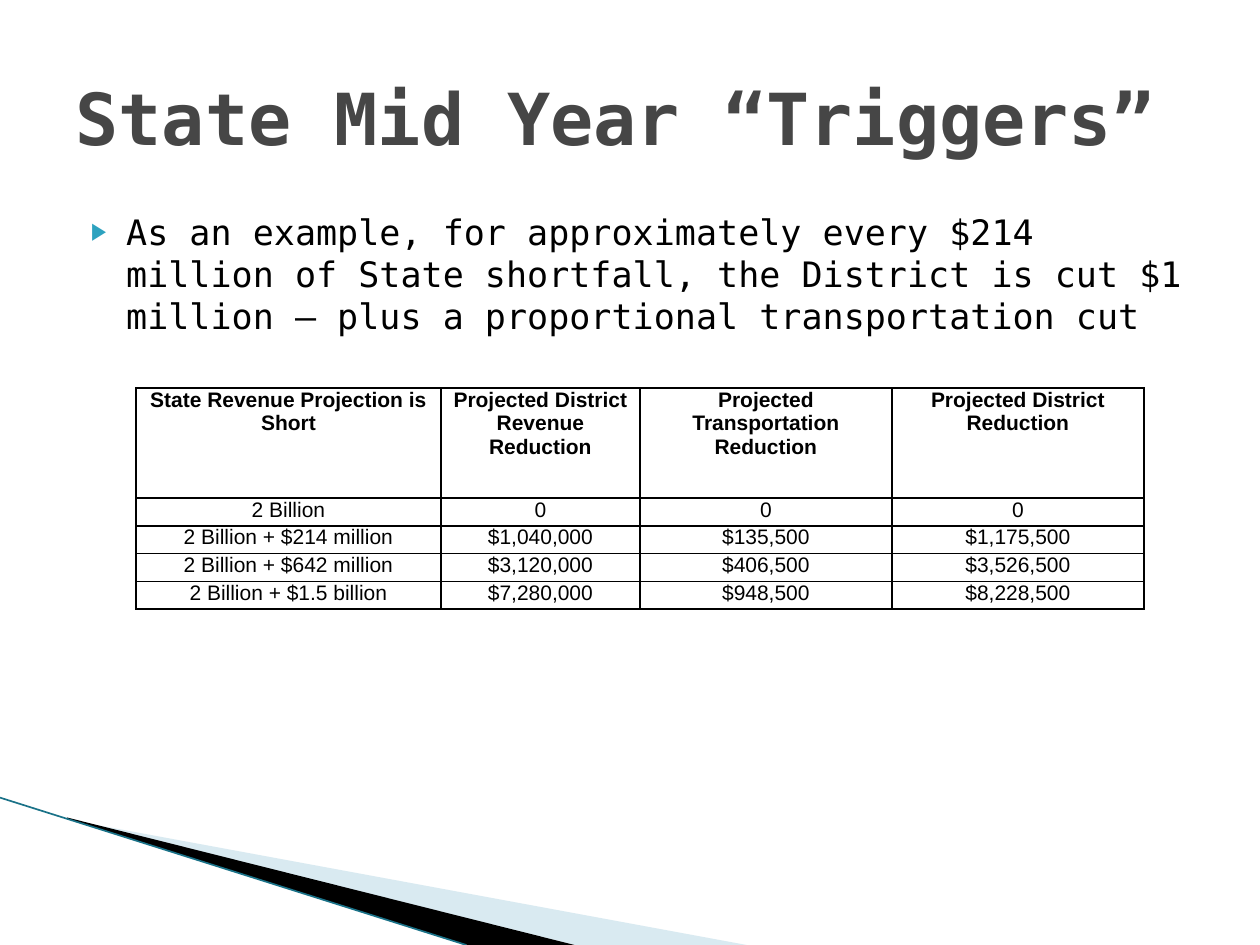
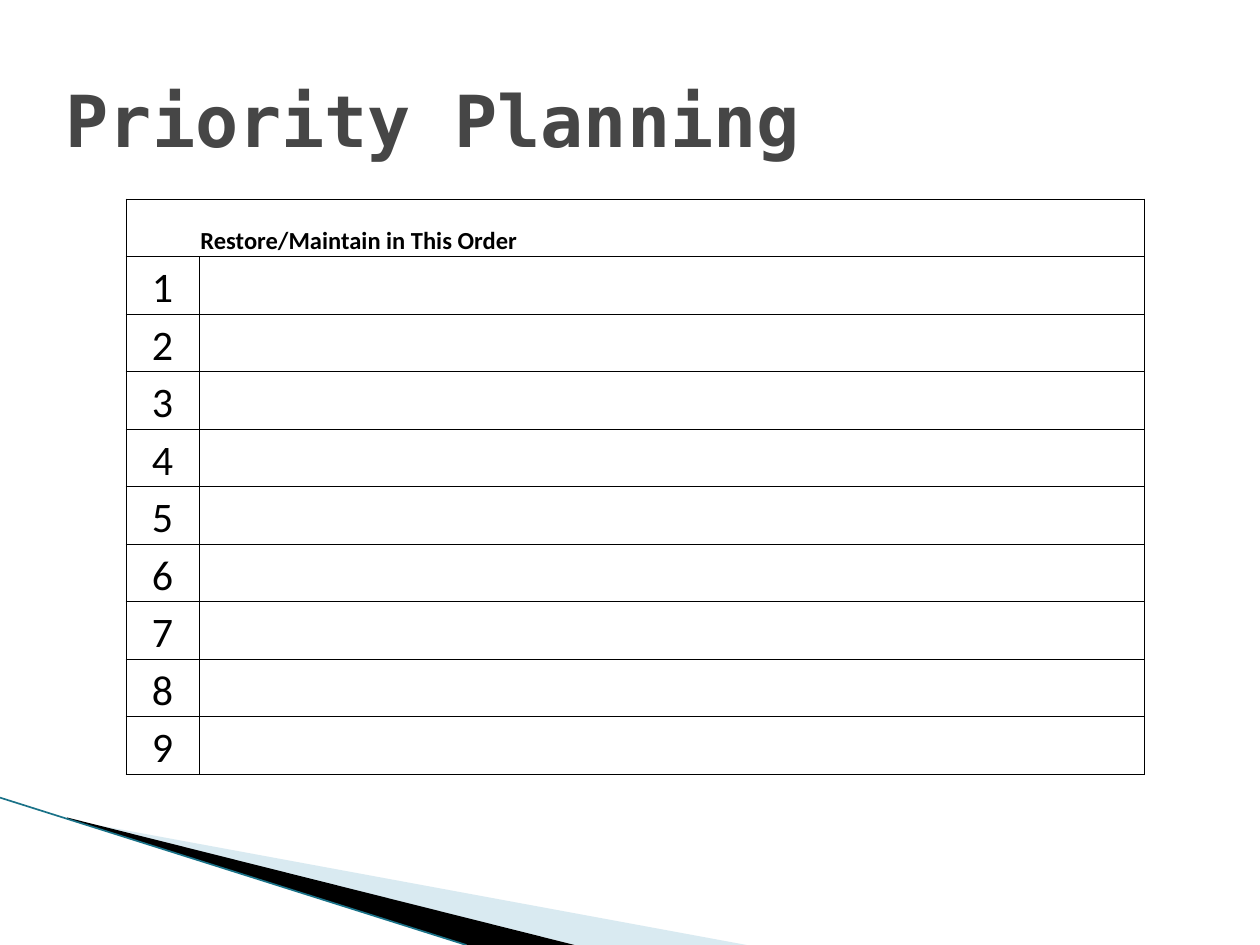
import pptx
import pptx.dml.color
import pptx.enum.shapes
import pptx.enum.text
import pptx.oxml
import pptx.oxml.ns
import pptx.util
from lxml import etree

Cm = pptx.util.Cm
Pt = pptx.util.Pt
RGBColor = pptx.dml.color.RGBColor
MSO_ANCHOR = pptx.enum.text.MSO_ANCHOR
PP_ALIGN = pptx.enum.text.PP_ALIGN
qn = pptx.oxml.ns.qn

BLACK = RGBColor(0x00, 0x00, 0x00)
TITLE_GREY = RGBColor(0x46, 0x46, 0x46)
BULLET_BLUE = RGBColor(0x2D, 0xA2, 0xBF)
PALE_BLUE = RGBColor(0xA0, 0xCB, 0xDC)
EDGE_TEAL = RGBColor(0x1A, 0x72, 0x88)
MONO = "DejaVu Sans Mono"

SLIDE_SIZE = (25.4, 19.05)
PALE_WEDGE = [(1.4, 16.53), (15.05, 19.05), (11.58, 19.05), (1.4, 16.51)]
BLACK_WEDGE = [(1.35, 16.48), (11.58, 19.05), (9.42, 19.05), (1.37, 16.51)]
WEDGE_EDGE = [(0, 16.08), (9.4, 19.05)]

TRIGGERS = {
    "title": "State Mid Year “Triggers”",
    "title_box": (1.27, 0.76, 22.86, 3.18),
    "example": "As an example, for approximately every $214 million of State shortfall, "
               "the District is cut $1 million – plus a proportional transportation cut",
    "example_box": (1.27, 4.11, 22.86, 12.57),
    "cuts": [
        ("State Revenue Projection is Short", "Projected District Revenue Reduction",
         "Projected Transportation Reduction", "Projected District Reduction"),
        ("2 Billion", "0", "0", "0"),
        ("2 Billion + $214 million", "$1,040,000", "$135,500", "$1,175,500"),
        ("2 Billion + $642 million", "$3,120,000", "$406,500", "$3,526,500"),
        ("2 Billion + $1.5 billion", "$7,280,000", "$948,500", "$8,228,500"),
    ],
    "cuts_corner": (2.74, 7.82),
    "cuts_columns": (6.15, 4.01, 5.08, 5.08),
    "cuts_rows": (2.22, 0.56, 0.56, 0.56, 0.56),
}
PRIORITIES = {
    "title": "Priority Planning",
    "title_box": (1.07, 0.84, 23.06, 3.1),
    "order": [("", "Restore/Maintain in This Order")]
             + [(str(rank), "") for rank in range(1, 10)],
    "order_corner": (2.54, 4.01),
    "order_columns": (1.47, 19.05),
    "order_rows": (1.16,) * 10,
}


def style_runs(paragraph, font_name, size, color, bold=False):
    for run in paragraph.runs:
        run.font.name = font_name
        run.font.size = Pt(size)
        run.font.bold = bold
        run.font.color.rgb = color


def place(placeholder, box):
    left, top, width, height = map(Cm, box)
    placeholder.left, placeholder.top = left, top
    placeholder.width, placeholder.height = width, height
    placeholder.text_frame.auto_size = pptx.enum.text.MSO_AUTO_SIZE.NONE


def add_wedge(slide, points, color, opacity=100):
    corners = [(Cm(x), Cm(y)) for x, y in points]
    builder = slide.shapes.build_freeform(*corners[0])
    builder.add_line_segments(corners[1:], close=True)
    wedge = builder.convert_to_shape()
    wedge.shadow.inherit = False
    wedge.fill.solid()
    wedge.fill.fore_color.rgb = color
    wedge.line.fill.background()
    if opacity < 100:
        tint = wedge.fill._xPr.find(".//" + qn("a:srgbClr"))
        etree.SubElement(tint, qn("a:alpha"), val=str(opacity * 1000))


def add_corner_band(slide):
    add_wedge(slide, PALE_WEDGE, PALE_BLUE, 40)
    add_wedge(slide, BLACK_WEDGE, BLACK)
    start, end = [(Cm(x), Cm(y)) for x, y in WEDGE_EDGE]
    edge = slide.shapes.add_connector(
        pptx.enum.shapes.MSO_CONNECTOR.STRAIGHT, *start, *end)
    edge.line.color.rgb = EDGE_TEAL
    edge.line.width = Pt(0.95)
    etree.SubElement(edge._element.spPr, qn("a:effectLst"))


def start_slide(deck, layout_index, content):
    slide = deck.slides.add_slide(deck.slide_layouts[layout_index])
    add_corner_band(slide)
    title = slide.shapes.title
    place(title, content["title_box"])
    title.text_frame.text = content["title"]
    title.text_frame.vertical_anchor = MSO_ANCHOR.MIDDLE
    heading = title.text_frame.paragraphs[0]
    heading.alignment = PP_ALIGN.LEFT
    style_runs(heading, MONO, 41, TITLE_GREY, bold=True)
    return slide


def set_borders(cell, width, open_sides=""):
    properties = cell._tc.get_or_add_tcPr()
    for side in "LRTB":
        border = etree.SubElement(properties, qn("a:ln" + side), w=str(Pt(width)))
        if side in open_sides:
            etree.SubElement(border, qn("a:noFill"))
        else:
            fill = etree.SubElement(border, qn("a:solidFill"))
            etree.SubElement(fill, qn("a:srgbClr"), val=str(BLACK))


def add_grid(slide, rows, corner, columns, heights):
    grid = slide.shapes.add_table(
        len(rows), len(columns), *map(Cm, corner),
        Cm(sum(columns)), Cm(sum(heights))).table
    grid.first_row = grid.horz_banding = False
    for column, width in zip(grid.columns, columns):
        column.width = Cm(width)
    for row, height in zip(grid.rows, heights):
        row.height = Cm(height)
    for r, texts in enumerate(rows):
        for c, text in enumerate(texts):
            cell = grid.cell(r, c)
            cell.text_frame.text = text
            yield r, c, cell, cell.text_frame.paragraphs[0]


def set_margins(cell, sides, top):
    cell.margin_left = cell.margin_right = Cm(sides)
    cell.margin_top, cell.margin_bottom = Cm(top), 0


def add_example(slide):
    example = slide.placeholders[1]
    place(example, TRIGGERS["example_box"])
    example.text_frame.text = TRIGGERS["example"]
    paragraph = example.text_frame.paragraphs[0]
    paragraph.level = 1
    paragraph.space_before = Pt(0)
    properties = paragraph._p.get_or_add_pPr()
    properties.set("marL", str(Cm(1.02)))
    properties.set("indent", str(Cm(-0.71)))
    bullet_color = etree.SubElement(properties, qn("a:buClr"))
    etree.SubElement(bullet_color, qn("a:srgbClr"), val=str(BULLET_BLUE))
    etree.SubElement(properties, qn("a:buSzPct"), val="68000")
    etree.SubElement(properties, qn("a:buChar"), char="▶")
    style_runs(paragraph, MONO, 20, BLACK)


def build_triggers(deck):
    slide = start_slide(deck, 1, TRIGGERS)
    add_example(slide)
    for r, c, cell, paragraph in add_grid(
            slide, TRIGGERS["cuts"], TRIGGERS["cuts_corner"],
            TRIGGERS["cuts_columns"], TRIGGERS["cuts_rows"]):
        set_margins(cell, 0.18, 0)
        set_borders(cell, 1)
        cell.fill.background()
        paragraph.alignment = PP_ALIGN.CENTER
        style_runs(paragraph, "Arial", 12, BLACK, bold=r == 0)


def build_priorities(deck):
    slide = start_slide(deck, 5, PRIORITIES)
    for r, c, cell, paragraph in add_grid(
            slide, PRIORITIES["order"], PRIORITIES["order_corner"],
            PRIORITIES["order_columns"], PRIORITIES["order_rows"]):
        header = r == 0
        set_margins(cell, 0.03, 0.03)
        set_borders(cell, 0.5, "RL"[c] if header else "")
        cell.fill.background()
        cell.vertical_anchor = MSO_ANCHOR.BOTTOM
        paragraph.alignment = PP_ALIGN.LEFT if header else PP_ALIGN.CENTER
        style_runs(paragraph, "Calibri", 14 if header else 24, BLACK, bold=header)


def main():
    deck = pptx.Presentation()
    deck.slide_width, deck.slide_height = map(Cm, SLIDE_SIZE)
    build_triggers(deck)
    build_priorities(deck)
    deck.save("out.pptx")


if __name__ == "__main__":
    main()
